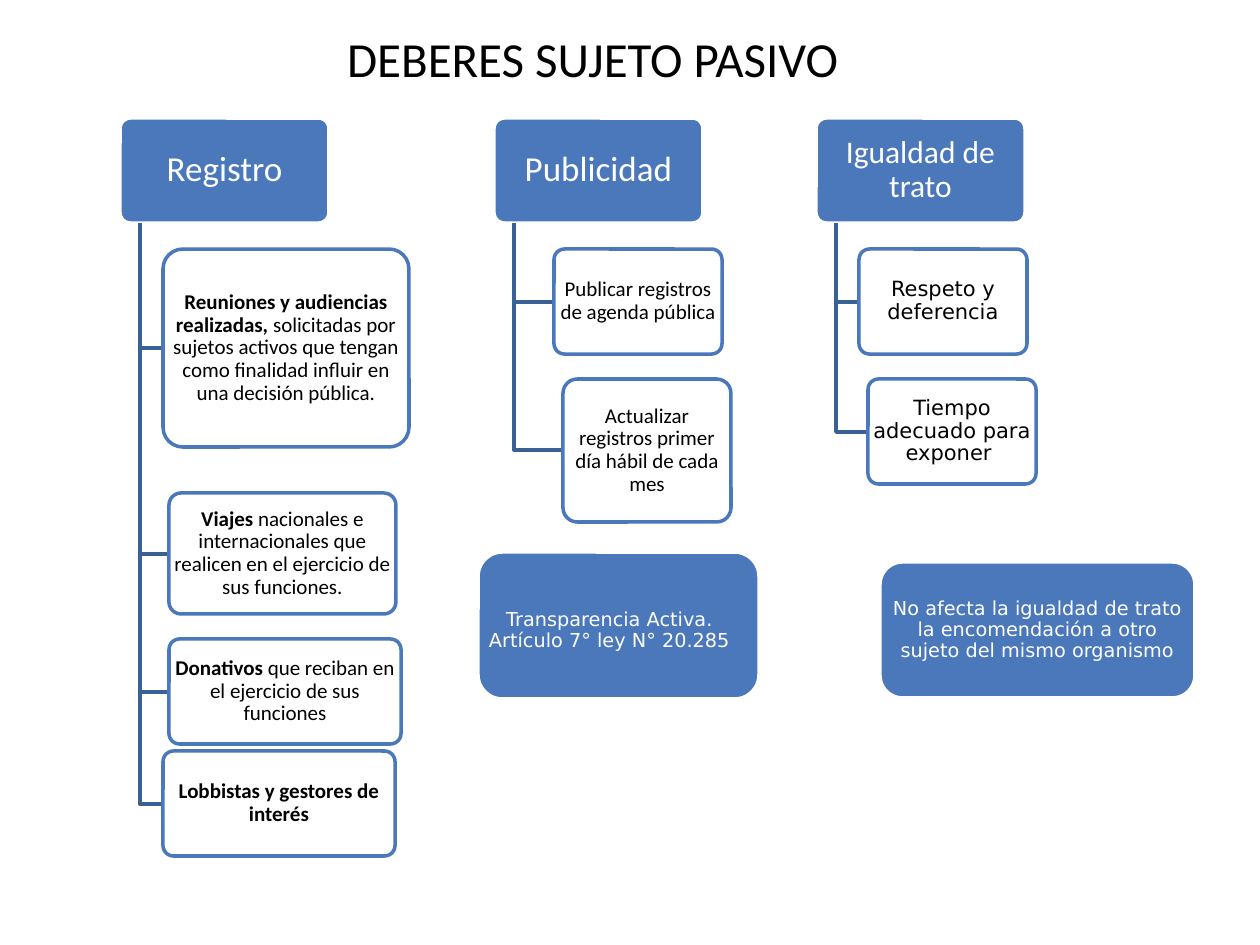
from dataclasses import dataclass

import pptx
import pptx.dml.color
import pptx.enum.shapes
import pptx.enum.text
import pptx.util

EMU_PER_PX = 914400 / 126
COLORS = {"blue": "4A78BB", "branch": "3B6096", "white": "FFFFFF", "black": "000000"}
SANS = "DejaVu Sans"
HEADER_TOP, HEADER_WIDTH, HEADER_HEIGHT = 118, 209, 105
TRUNK_OFFSET = 20
CORNER = 0.1
CALLOUT_CORNER = 0.16667


@dataclass(frozen=True)
class Box:
    left: int
    top: int
    width: int
    height: int


@dataclass(frozen=True)
class Style:
    size: int
    color: str = "black"
    font: str = "Calibri"
    margin: int = 4


@dataclass(frozen=True)
class Duty:
    box: Box
    text: str
    bold: str = ""


@dataclass(frozen=True)
class Column:
    left: int
    title: str
    title_size: int
    font: str
    duties: tuple[Duty, ...]


@dataclass(frozen=True)
class Callout:
    box: Box
    text_box: Box
    text: str


COLUMNS = (
    Column(120, "Registro", 20, "Calibri", (
        Duty(Box(163, 249, 246, 198),
             "solicitadas por sujetos activos que tengan como finalidad influir "
             "en una decisión pública.", "Reuniones y audiencias realizadas, "),
        Duty(Box(169, 493, 227, 121),
             " nacionales e internacionales que realicen en el ejercicio de sus funciones.",
             "Viajes"),
        Duty(Box(169, 639, 232, 105),
             "que reciban en el ejercicio de sus funciones", "Donativos "),
        Duty(Box(163, 751, 232, 105), "", "Lobbistas y gestores de interés"),
    )),
    Column(494, "Publicidad", 20, "Calibri", (
        Duty(Box(554, 249, 168, 105), "Publicar registros de agenda pública"),
        Duty(Box(563, 379, 168, 143), "Actualizar registros primer día hábil de cada mes"),
    )),
    Column(816, "Igualdad de trato", 18, SANS, (
        Duty(Box(859, 249, 168, 105), "Respeto y deferencia"),
        Duty(Box(868, 379, 168, 105), "Tiempo adecuado para exponer "),
    )),
)
CALLOUTS = (
    Callout(Box(880, 562, 315, 136), Box(880, 562, 315, 136),
            "No afecta la igualdad de trato la encomendación a otro sujeto del mismo organismo"),
    Callout(Box(478, 552, 281, 147), Box(462, 570, 295, 122),
            "Transparencia Activa. Artículo 7° ley N° 20.285"),
)


def px(length: float) -> pptx.util.Emu:
    return pptx.util.Emu(round(length * EMU_PER_PX))


def rgb(name: str) -> pptx.dml.color.RGBColor:
    return pptx.dml.color.RGBColor.from_string(COLORS[name])


def bounds(box: Box) -> tuple:
    return px(box.left), px(box.top), px(box.width), px(box.height)


def write(shape, runs: tuple[tuple[str, bool], ...], style: Style, inset: int = 0,
          line_spacing: float = 0.9) -> None:
    """Fill a shape with one centred paragraph of (text, bold) runs."""
    frame = shape.text_frame
    frame.word_wrap = True
    frame.auto_size = pptx.enum.text.MSO_AUTO_SIZE.NONE
    frame.vertical_anchor = pptx.enum.text.MSO_ANCHOR.MIDDLE
    frame.margin_left = frame.margin_right = px(inset)
    frame.margin_top = frame.margin_bottom = px(inset)
    paragraph = frame.paragraphs[0]
    paragraph.alignment = pptx.enum.text.PP_ALIGN.CENTER
    paragraph.line_spacing = line_spacing
    for text, bold in runs:
        if text:
            run = paragraph.add_run()
            run.text = text
            run.font.name = style.font
            run.font.size = pptx.util.Pt(style.size)
            run.font.bold = bold
            run.font.color.rgb = rgb(style.color)


def add_rounded(slide, box: Box, fill: str, line: str, corner: float = CORNER):
    shape = slide.shapes.add_shape(
        pptx.enum.shapes.MSO_SHAPE.ROUNDED_RECTANGLE, *bounds(box))
    shape.adjustments[0] = corner
    shape.shadow.inherit = False
    shape.fill.solid()
    shape.fill.fore_color.rgb = rgb(fill)
    shape.line.color.rgb = rgb(line)
    shape.line.width = pptx.util.Pt(2)
    return shape


def corner_inset(box: Box, margin: int) -> int:
    """Margin left over once the rounded corners have pushed the text in."""
    return max(0, round(margin - 0.29 * CORNER * min(box.width, box.height)))


def add_branch(slide, trunk: int, top: int, target: Box) -> None:
    middle = target.top + target.height / 2
    builder = slide.shapes.build_freeform(trunk, top, scale=EMU_PER_PX)
    builder.add_line_segments([(trunk, middle), (target.left, middle)], close=False)
    branch = builder.convert_to_shape()
    branch.shadow.inherit = False
    branch.fill.background()
    branch.line.color.rgb = rgb("branch")
    branch.line.width = pptx.util.Pt(2)


def add_column(slide, column: Column) -> None:
    header_box = Box(column.left, HEADER_TOP, HEADER_WIDTH, HEADER_HEIGHT)
    header = add_rounded(slide, header_box, "blue", "white")
    write(header, ((column.title, False),), Style(column.title_size, "white"),
          corner_inset(header_box, 5))
    style = Style(12, font=column.font)
    for duty in column.duties:
        add_branch(slide, column.left + TRUNK_OFFSET, HEADER_TOP + HEADER_HEIGHT, duty.box)
        shape = add_rounded(slide, duty.box, "white", "blue")
        write(shape, ((duty.bold, True), (duty.text, False)), style,
              corner_inset(duty.box, style.margin))


def add_callout(slide, callout: Callout) -> None:
    add_rounded(slide, callout.box, "blue", "white", CALLOUT_CORNER)
    label = slide.shapes.add_textbox(*bounds(callout.text_box))
    write(label, ((callout.text, False),), Style(11, "white", SANS), 6)


def main() -> None:
    presentation = pptx.Presentation()
    presentation.slide_width = px(1260)
    presentation.slide_height = px(945)
    slide = presentation.slides.add_slide(presentation.slide_layouts[5])
    title = slide.shapes.title
    title.left, title.top, title.width, title.height = bounds(Box(30, 21, 1125, 73))
    write(title, (("DEBERES SUJETO PASIVO", False),), Style(28), line_spacing=1.0)
    for column in COLUMNS:
        add_column(slide, column)
    for callout in CALLOUTS:
        add_callout(slide, callout)
    presentation.save("out.pptx")


if __name__ == "__main__":
    main()
